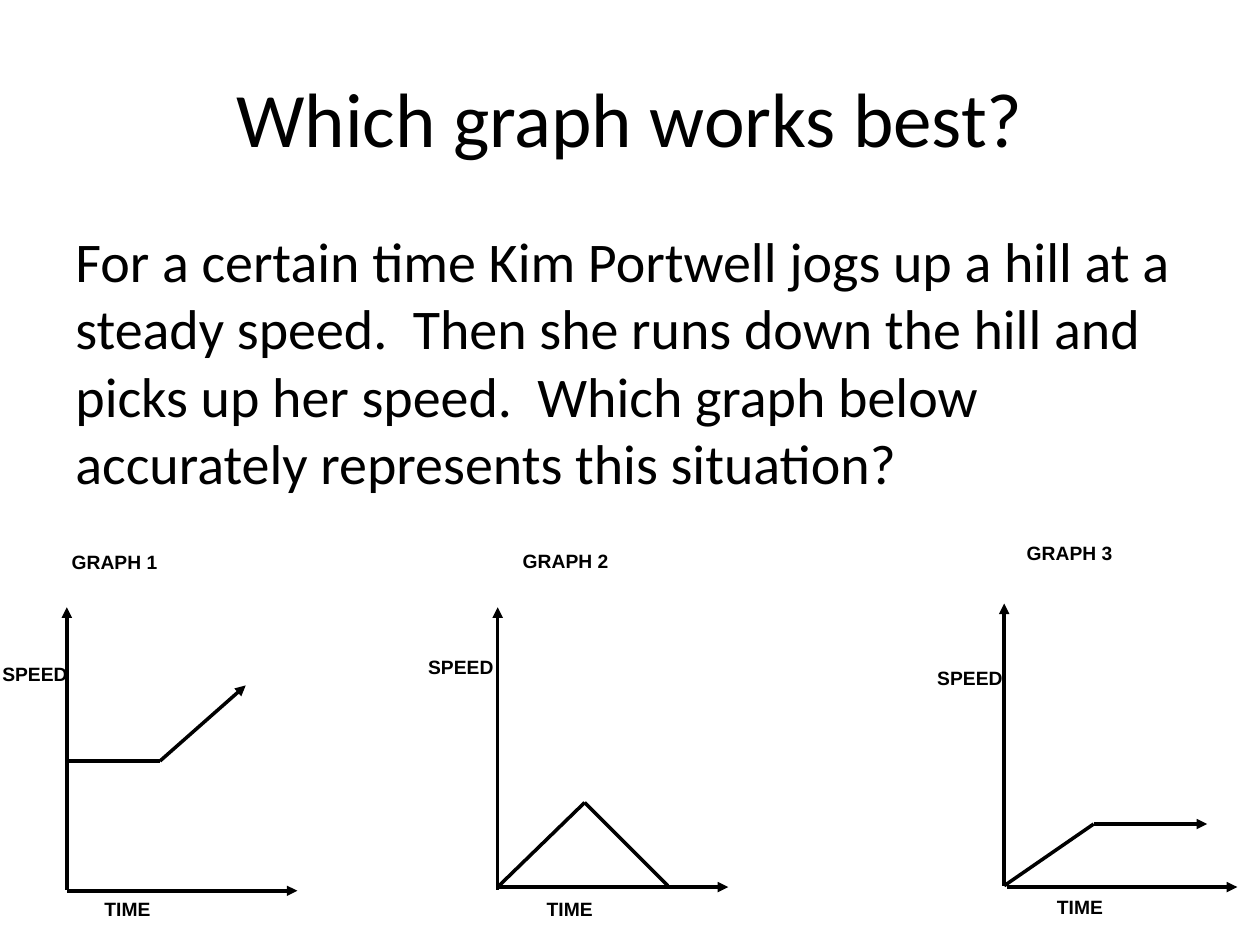
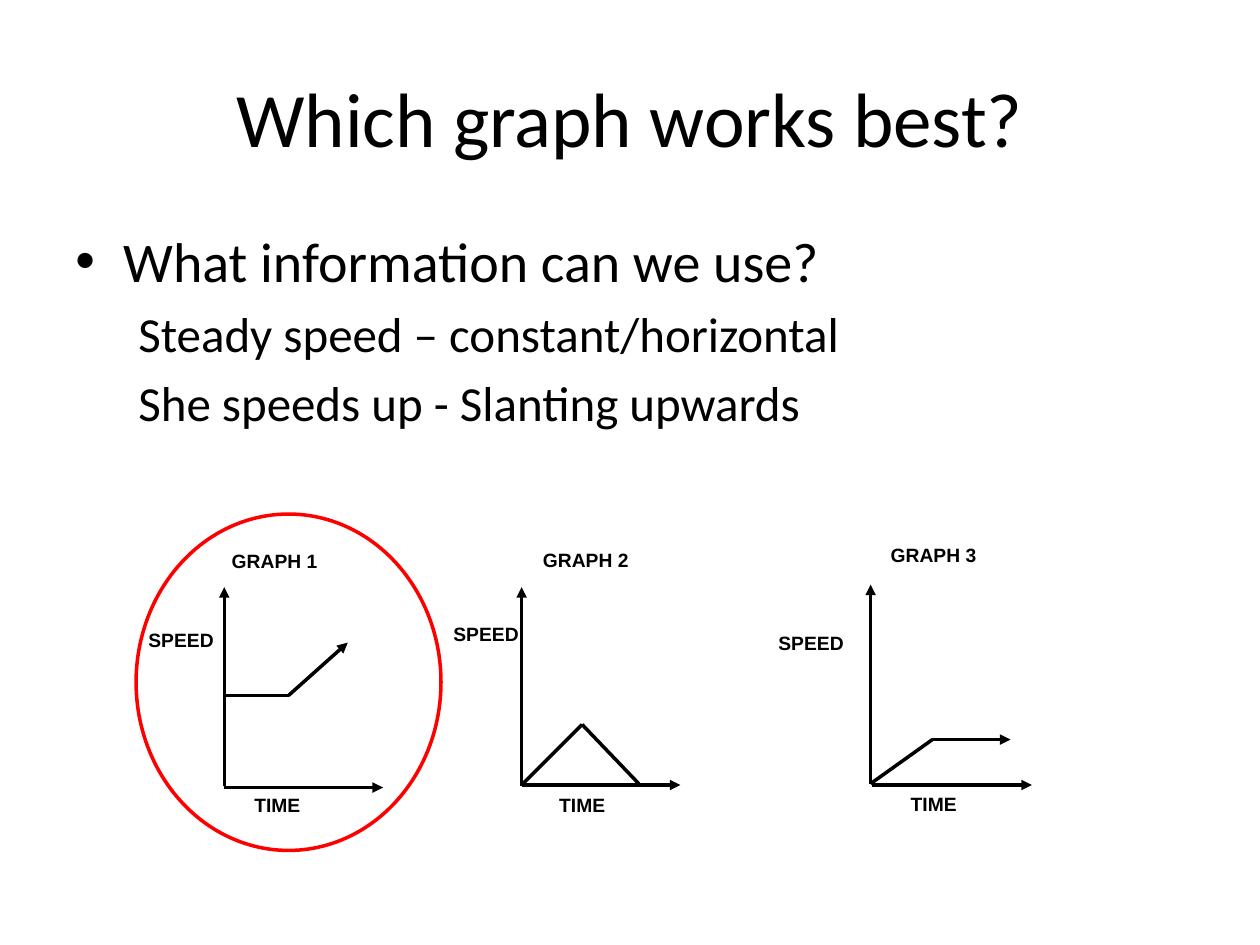
import pptx
import pptx.util
import pptx.dml.color
import pptx.enum.shapes
import pptx.enum.text
import pptx.oxml.ns
import lxml.etree

PX = 9144
BLACK = pptx.dml.color.RGBColor(0x00, 0x00, 0x00)
RED = pptx.dml.color.RGBColor(0xFF, 0x00, 0x00)
LINE_WIDTH = pptx.util.Pt(2)

STORY = ("For a certain time Kim Portwell jogs up a hill at a steady speed.  "
         "Then she runs down the hill and picks up her speed.  "
         "Which graph below accurately represents this situation?")

GRAPHS = [
    {"name": "GRAPH 1", "name_at": (-6, -274), "time_at": (20, 1), "speed_top": -185,
     "time_axis": (0, 1), "curve": [(0, -102), (74, -102), (142, -162)], "arrow": True},
    {"name": "GRAPH 2", "name_at": (10, -275), "time_at": (29, 1), "speed_top": -191,
     "time_axis": (0, -2), "curve": [(0, -2), (69, -69), (135, -3)], "arrow": False},
    {"name": "GRAPH 3", "name_at": (8, -278), "time_at": (32, 3), "speed_top": -179,
     "time_axis": (2, 1), "curve": [(0, 0), (71, -49), (161, -49)], "arrow": True},
]

SLIDES = [
    {"body": [(STORY, 32, 0, 0, 0)],
     "scale": (1, 1),
     "origins": [(53, 706), (395, 706), (797, 703)],
     "speed_lefts": [-8, 330, 734],
     "answer": None},
    {"body": [("What information can we use?", 32, 0, 38, -38),
              ("Steady speed – constant/horizontal", 28, 1, 50, 0),
              ("She speeds up - Slanting upwards", 28, 1, 50, 0)],
     "scale": (0.69, 0.705),
     "origins": [(178, 624), (414, 624), (691, 622)],
     "speed_lefts": [108, 350, 608],
     "answer": (108, 408, 242, 267)},
]


def add_line(shapes, start, end, arrow):
    line = shapes.add_connector(pptx.enum.shapes.MSO_CONNECTOR.STRAIGHT,
                                *[round(v) * PX for v in (*start, *end)])
    line.line.color.rgb = BLACK
    line.line.width = LINE_WIDTH
    if arrow:
        lxml.etree.SubElement(line.line._get_or_add_ln(),
                              pptx.oxml.ns.qn("a:tailEnd"), type="triangle")
    lxml.etree.SubElement(line._element.spPr, pptx.oxml.ns.qn("a:effectLst"))


def add_label(shapes, text, left, top, width, height):
    label = shapes.add_textbox(*[round(v) * PX for v in (left, top, width, height)])
    label.text_frame.word_wrap = True
    paragraph = label.text_frame.paragraphs[0]
    paragraph.text = text
    paragraph.space_after = pptx.util.Pt(10)
    paragraph.font.name = "Arial"
    paragraph.font.size = pptx.util.Pt(11)
    paragraph.font.bold = True
    paragraph.font.color.rgb = BLACK


deck = pptx.Presentation()
deck.slide_width = 1000 * PX
deck.slide_height = 750 * PX

for content in SLIDES:
    slide = deck.slides.add_slide(deck.slide_layouts[5])

    title = slide.shapes.title
    title.left, title.top, title.width, title.height = [v * PX for v in (50, 30, 900, 125)]
    title.text_frame.vertical_anchor = pptx.enum.text.MSO_ANCHOR.MIDDLE
    heading = title.text_frame.paragraphs[0]
    heading.text = "Which graph works best?"
    heading.alignment = pptx.enum.text.PP_ALIGN.CENTER
    heading.font.name = "Calibri"
    heading.font.size = pptx.util.Pt(44)
    heading.font.color.rgb = BLACK

    body = slide.shapes.add_textbox(*[v * PX for v in (50, 175, 900, 495)]).text_frame
    body.word_wrap = True
    for index, (text, size, level, margin, indent) in enumerate(content["body"]):
        paragraph = body.add_paragraph() if index else body.paragraphs[0]
        paragraph.text = text
        paragraph.level = level
        paragraph.space_before = pptx.util.Pt(size * 0.2)
        paragraph.font.name = "Calibri"
        paragraph.font.size = pptx.util.Pt(size)
        paragraph.font.color.rgb = BLACK
        properties = paragraph._p.get_or_add_pPr()
        properties.set("marL", str(margin * PX))
        properties.set("indent", str(indent * PX))
        if indent:
            lxml.etree.SubElement(properties, pptx.oxml.ns.qn("a:buFont"), typeface="Arial")
            lxml.etree.SubElement(properties, pptx.oxml.ns.qn("a:buChar"), char="•")

    graphs = slide.shapes.add_group_shape().shapes
    across, down = content["scale"]
    for graph, (x, y), speed_left in zip(GRAPHS, content["origins"], content["speed_lefts"]):
        axis_x, axis_y = x + graph["time_axis"][0] * across, y + graph["time_axis"][1] * down
        add_line(graphs, (x, y), (x, y - 224 * down), True)
        add_line(graphs, (axis_x, axis_y), (axis_x + 183 * across, axis_y), True)

        curve = [(x + dx * across, y + dy * down) for dx, dy in graph["curve"]]
        add_line(graphs, curve[0], curve[1], False)
        add_line(graphs, curve[1], curve[2], graph["arrow"])

        for text, (dx, dy), width in [("TIME", graph["time_at"], 121),
                                      (graph["name"], graph["name_at"], 195)]:
            add_label(graphs, text, x + dx * across, y + dy * down, width * across, 43 * down)
        add_label(graphs, "SPEED", speed_left, y + graph["speed_top"] * down, 90, 131 * down)

    if content["answer"]:
        ring = slide.shapes.add_shape(pptx.enum.shapes.MSO_SHAPE.OVAL,
                                      *[v * PX for v in content["answer"]])
        ring.shadow.inherit = False
        ring.fill.background()
        ring.line.color.rgb = RED
        ring.line.width = LINE_WIDTH

deck.save("out.pptx")
